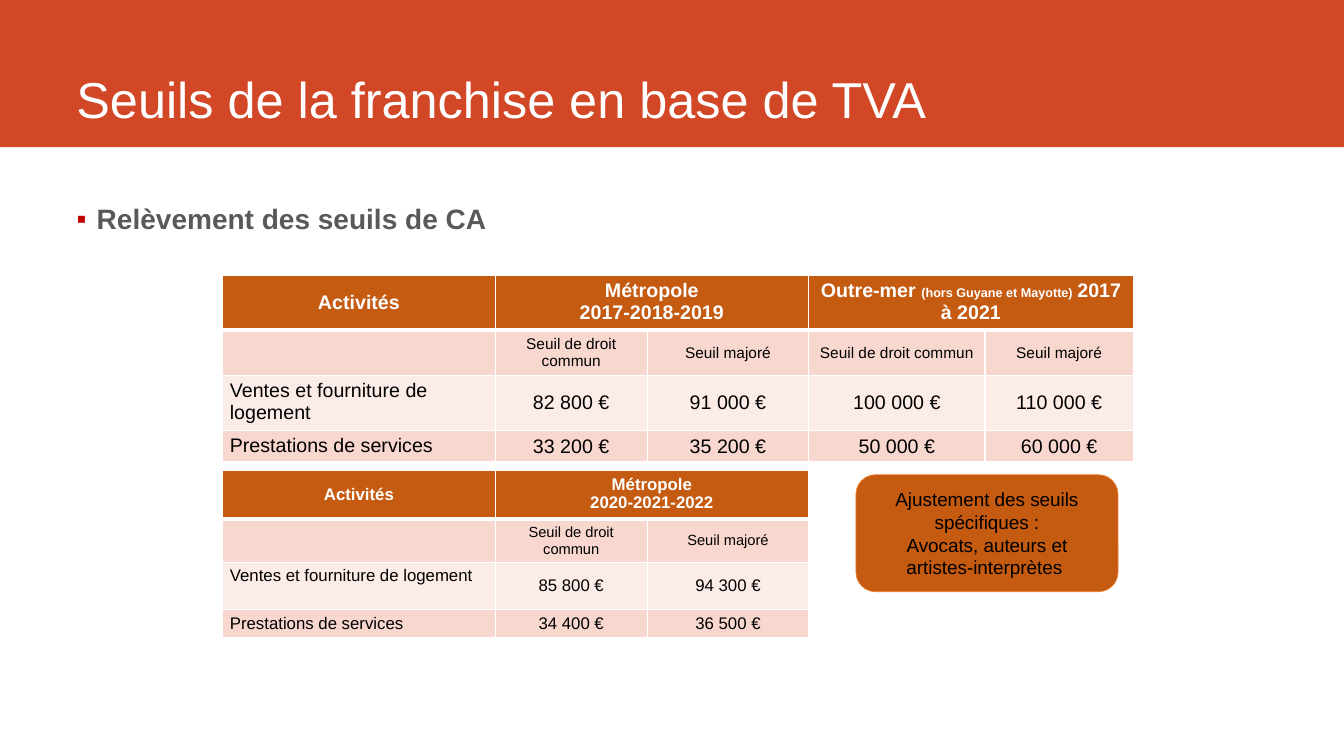
from lxml.etree import SubElement
from pptx import Presentation
from pptx.dml.color import RGBColor
from pptx.enum.shapes import MSO_SHAPE
from pptx.enum.text import MSO_ANCHOR, PP_ALIGN
from pptx.oxml.ns import qn
from pptx.util import Inches, Pt

SLIDE_WIDTH, SLIDE_HEIGHT = Inches(13.33), Inches(7.5)
WHITE, BLACK, GREY = "FFFFFF", "000000", "595959"
BAND_RED, BULLET_RED = "D24726", "C00000"
RUST, ORANGE = "C55A11", "ED7D31"
ROW_FILLS = [RUST, "F8D7CE", "FCECE8", "F8D7CE"]
COLUMN_SHARES = [20.26, 11.33, 12, 13.13, 11.03]
TABLE_LEFT = 16.58
THRESHOLDS = ["Seuil de droit commun", "Seuil majoré"]
SALES, SERVICES = "Ventes et fourniture de logement", "Prestations de services"
OVERSEAS = [("Outre-mer ", 14), ("(hors Guyane et Mayotte)", 9), (" ", 12), ("2017 à 2021", 14)]

OLD_THRESHOLDS = [
    ["Activités", "Métropole\n2017-2018-2019", "", OVERSEAS, ""],
    ["", *THRESHOLDS, *THRESHOLDS],
    [SALES, "82 800 €", "91 000 €", "100 000 €", "110 000 €"],
    [SERVICES, "33 200 €", "35 200 €", "50 000 €", "60 000 €"],
]
NEW_THRESHOLDS = [
    ["Activités", "Métropole\n2020-2021-2022", ""],
    ["", *THRESHOLDS],
    [SALES, "85 800 €", "94 300 €"],
    [SERVICES, "34 400 €", "36 500 €"],
]


def across(share):
    """Turn a percentage of the slide width into a length."""
    return round(SLIDE_WIDTH * share / 100)


def down(share):
    """Turn a percentage of the slide height into a length."""
    return round(SLIDE_HEIGHT * share / 100)


def area(left, top, width, height):
    """Return a frame given as percentages of the slide."""
    return across(left), down(top), across(width), down(height)


def paint(color_format, color):
    """Give a fill's or font's colour format a hex colour."""
    color_format.rgb = RGBColor.from_string(color)


def apply_format(target, formats):
    """Set each attribute named in a dict of format values."""
    for name, value in formats.items():
        setattr(target, name, value)


def write(frame, content, size, color, bold=False, align=PP_ALIGN.LEFT):
    """Write lines, or one line of differently sized runs, into a text frame."""
    lines = [[(line, size)] for line in content.split("\n")] if isinstance(content, str) else [content]
    for index, runs in enumerate(lines):
        paragraph = frame.add_paragraph() if index else frame.paragraphs[0]
        paragraph.alignment = align
        for text, run_size in runs:
            run = paragraph.add_run()
            run.text = text
            apply_format(run.font, {"name": "Arial", "size": Pt(run_size), "bold": bold})
            paint(run.font.color, color)


def add_panel(slide, kind, frame, fill, outline=None):
    """Add a filled shape with an optional thin outline."""
    panel = slide.shapes.add_shape(kind, *frame)
    panel.shadow.inherit = False
    panel.fill.solid()
    paint(panel.fill.fore_color, fill)
    if outline:
        panel.line.width = Pt(0.5)
        paint(panel.line.color, outline)
    else:
        panel.line.fill.background()
    return panel


def add_text(slide, frame, content, formats, **style):
    """Add a wrapping text box and return its text frame."""
    text_frame = slide.shapes.add_textbox(*frame).text_frame
    apply_format(text_frame, {"word_wrap": True, **formats})
    write(text_frame, content, **style)
    return text_frame


def add_bullet(paragraph):
    """Give a paragraph a hanging square bullet."""
    apply_format(paragraph, {"space_before": Pt(6), "space_after": Pt(6)})
    properties = paragraph._p.get_or_add_pPr()
    properties.set("marL", str(Inches(0.2)))
    properties.set("indent", str(-Inches(0.2)))
    bullet_color = SubElement(properties, qn("a:buClr"))
    SubElement(bullet_color, qn("a:srgbClr"), val=BULLET_RED)
    SubElement(properties, qn("a:buFont"), typeface="Arial")
    SubElement(properties, qn("a:buChar"), char="▪")


def add_borders(cell, widths):
    """Draw white borders of the given point widths around a cell."""
    properties = cell._tc.get_or_add_tcPr()
    for side, width in widths.items():
        border = SubElement(properties, qn(f"a:ln{side}"), w=str(Pt(width)))
        SubElement(SubElement(border, qn("a:solidFill")), qn("a:srgbClr"), val=WHITE)


def fill_cell(cell, content, row, column, sizes):
    """Format and write one cell according to its place in the table."""
    header, activity = row == 0, column == 0
    top_left = activity and row > 1
    two_line_header = header and not activity
    apply_format(cell, {
        "margin_left": Inches(0.07), "margin_right": Inches(0.07),
        "margin_top": Inches(0.04), "margin_bottom": Inches(0.04),
        "vertical_anchor": MSO_ANCHOR.TOP if top_left or two_line_header else MSO_ANCHOR.MIDDLE,
    })
    add_borders(cell, {"L": 1, "R": 1, "T": 3 if row == 1 else 1, "B": 3 if header else 1})
    cell.fill.solid()
    paint(cell.fill.fore_color, ROW_FILLS[row])
    if content:
        write(cell.text_frame, content, sizes[row], WHITE if header else BLACK, header,
              PP_ALIGN.LEFT if top_left else PP_ALIGN.CENTER)


def add_threshold_table(slide, top, content, row_shares, sizes):
    """Add a table whose header joins each pair of threshold columns."""
    column_shares = COLUMN_SHARES[:len(content[0])]
    frame = area(TABLE_LEFT, top, sum(column_shares), sum(row_shares))
    table = slide.shapes.add_table(len(content), len(column_shares), *frame).table
    apply_format(table, {"first_row": False, "horz_banding": False})
    for column, share in zip(table.columns, column_shares):
        column.width = across(share)
    for row, share in zip(table.rows, row_shares):
        row.height = down(share)
    for row, values in enumerate(content):
        for column, value in enumerate(values):
            fill_cell(table.cell(row, column), value, row, column, sizes)
    for first in range(1, len(column_shares), 2):
        table.cell(0, first).merge(table.cell(0, first + 1))


def main():
    """Build the slide on VAT exemption thresholds."""
    presentation = Presentation()
    apply_format(presentation, {"slide_width": SLIDE_WIDTH, "slide_height": SLIDE_HEIGHT})
    slide = presentation.slides.add_slide(presentation.slide_layouts[6])

    add_panel(slide, MSO_SHAPE.RECTANGLE, area(0, 0, 100, 19.47), BAND_RED)
    add_text(slide, area(4.95, 0, 88.22, 17.6), "Seuils de la franchise en base de TVA",
             {"vertical_anchor": MSO_ANCHOR.BOTTOM}, size=36, color=WHITE)
    margins = dict.fromkeys(["margin_left", "margin_top", "margin_right", "margin_bottom"], 0)
    subject = add_text(slide, area(5.7, 26.67, 87.47, 63.47), "Relèvement des seuils de CA",
                       margins, size=20, color=GREY, bold=True)
    add_bullet(subject.paragraphs[0])

    add_threshold_table(slide, 36.4, OLD_THRESHOLDS, [7.07, 5.6, 7.07, 4], [14, 11, 14, 14])
    add_threshold_table(slide, 62.27, NEW_THRESHOLDS, [6.27, 5.07, 6.27, 3.6], [12, 10.5, 12, 12])

    adjustment = add_panel(slide, MSO_SHAPE.ROUNDED_RECTANGLE,
                           area(63.69, 62.8, 19.5, 15.47), RUST, ORANGE).text_frame
    apply_format(adjustment, {"word_wrap": True, "vertical_anchor": MSO_ANCHOR.MIDDLE})
    write(adjustment, "Ajustement des seuils spécifiques :\nAvocats, auteurs et artistes-interprètes ",
          13.5, BLACK, align=PP_ALIGN.CENTER)
    presentation.save("out.pptx")


if __name__ == "__main__":
    main()
